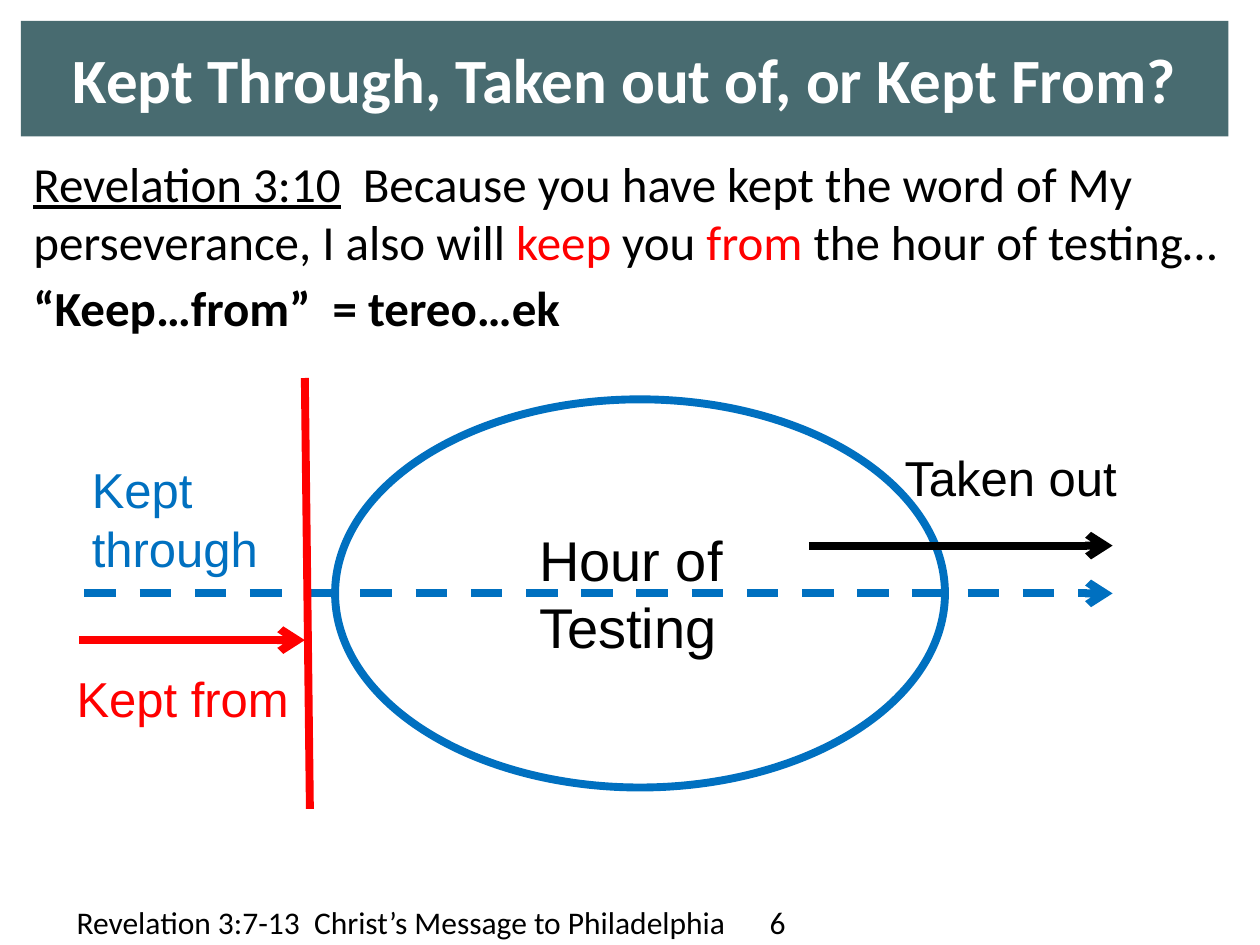
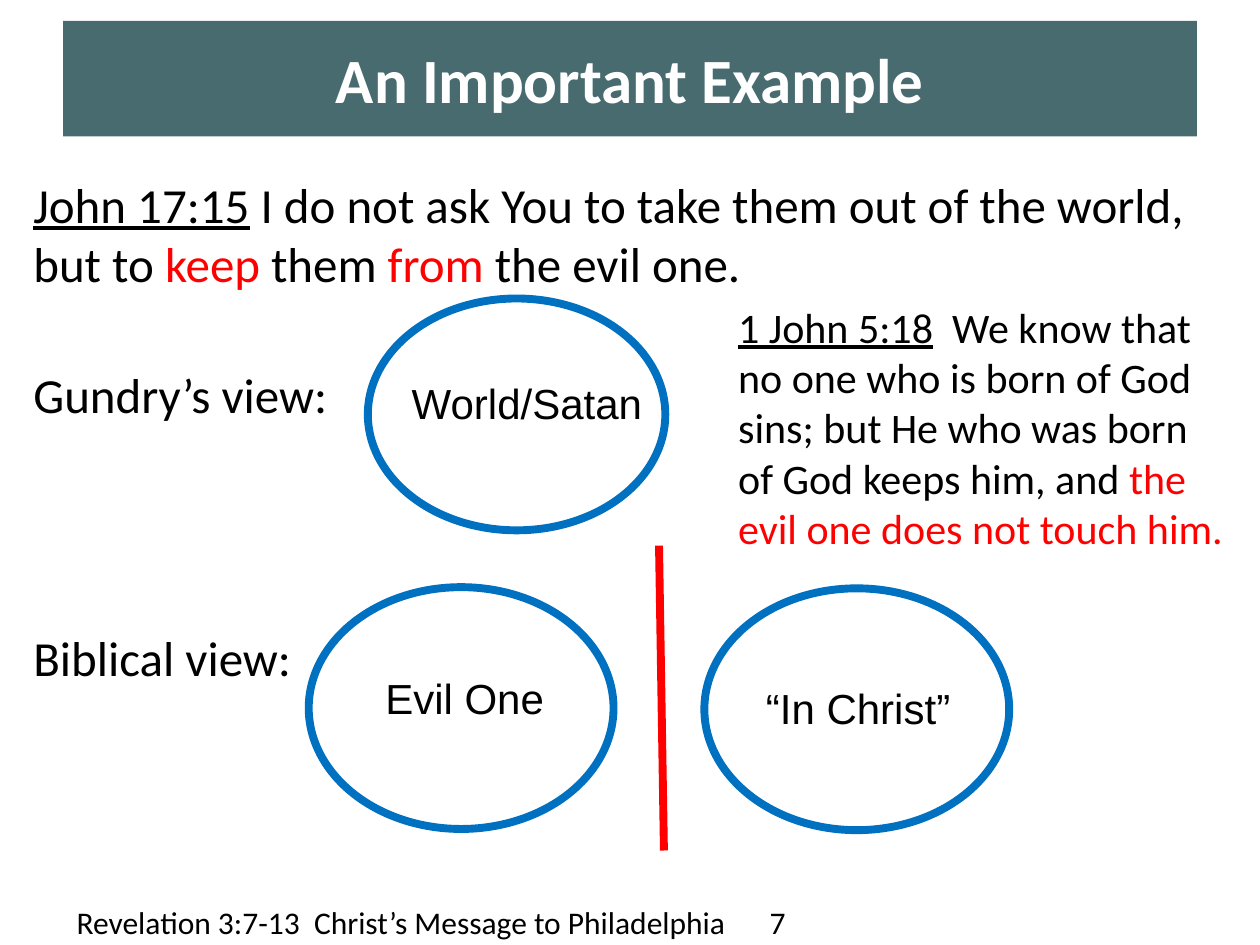
"""Build two slides on being kept from the hour of testing."""
from dataclasses import dataclass

import pptx
import pptx.dml.color
import pptx.enum.dml
import pptx.enum.shapes
import pptx.enum.text
import pptx.oxml
import pptx.oxml.ns
import pptx.util

Pt = pptx.util.Pt
ANCHOR = pptx.enum.text.MSO_ANCHOR
ALIGN = pptx.enum.text.PP_ALIGN


@dataclass(frozen=True)
class Theme:
    """Colours, fonts and sizes that the slides share."""
    band: str = "486B70"
    paper: str = "FFFFFF"
    ink: str = "000000"
    accent: str = "FF0000"
    blue: str = "0070C0"
    body_font: str = "Calibri"
    label_font: str = "Arial"
    title_size: int = 36
    hour_size: int = 32
    body_size: int = 28
    small_size: int = 24
    footer_size: int = 18
    stroke: float = 4.5
    para_gap: float = 4
    row_pitch: float = 37.5


THEME = Theme()
UNDERLINED = {"underline": True}
RED = {"color": THEME.accent}


def rgb(color):
    """Turn a hex string into a colour."""
    return pptx.dml.color.RGBColor.from_string(color)


def points(*lengths):
    """Turn numbers into lengths in points."""
    return [Pt(length) for length in lengths]


def write(paragraph, text, *, size, font=THEME.body_font, color=THEME.ink,
          bold=False, underline=False):
    """Add one formatted run to a paragraph."""
    run = paragraph.add_run()
    run.text = text
    run.font.name = font
    run.font.size = Pt(size)
    run.font.bold = bold
    run.font.underline = underline
    run.font.color.rgb = rgb(color)


def add_text(slide, box, paragraphs, anchor=ANCHOR.TOP, **style):
    """Add a text box from (space before, runs) pairs."""
    frame = slide.shapes.add_textbox(*points(*box)).text_frame
    frame.word_wrap = True
    frame.vertical_anchor = anchor
    for index, (gap, runs) in enumerate(paragraphs):
        paragraph = frame.paragraphs[0] if index == 0 else frame.add_paragraph()
        paragraph.space_before = Pt(gap)
        for text, changes in runs:
            write(paragraph, text, **{**style, **changes})


def add_label(slide, origin, place, text, size=THEME.small_size, color=THEME.ink):
    """Add a diagram label placed relative to the diagram's origin."""
    left, top, width, height = place
    box = (origin[0] + left, origin[1] + top, width, height)
    add_text(slide, box, [(0, [(text, {})])],
             size=size, color=color, font=THEME.label_font)


def add_ring(slide, origin, place):
    """Add an unfilled blue ellipse relative to the diagram's origin."""
    left, top, width, height = place
    ring = slide.shapes.add_shape(
        pptx.enum.shapes.MSO_SHAPE.OVAL,
        *points(origin[0] + left, origin[1] + top, width, height))
    ring.shadow.inherit = False
    ring.fill.background()
    ring.line.color.rgb = rgb(THEME.blue)
    ring.line.width = Pt(THEME.stroke)


def add_line(slide, origin, ends, color, arrow=False, dashed=False):
    """Add a straight line relative to the diagram's origin."""
    x1, y1, x2, y2 = ends
    x, y = origin
    connector = slide.shapes.add_connector(
        pptx.enum.shapes.MSO_CONNECTOR.STRAIGHT,
        *points(x + x1, y + y1, x + x2, y + y2))
    connector.line.color.rgb = rgb(color)
    connector.line.width = Pt(THEME.stroke)
    if dashed:
        connector.line.dash_style = pptx.enum.dml.MSO_LINE.DASH
    qn = pptx.oxml.ns.qn
    properties = connector.element.spPr
    if arrow:
        head = pptx.oxml.parse_xml(
            f'<a:tailEnd {pptx.oxml.ns.nsdecls("a")} type="arrow"/>')
        properties.find(qn("a:ln")).append(head)
    properties.append(properties.makeelement(qn("a:effectLst"), {}))


def add_title(slide, box, text):
    """Place and format the title placeholder as a coloured band."""
    title = slide.shapes.title
    title.left, title.top, title.width, title.height = points(*box)
    title.fill.solid()
    title.fill.fore_color.rgb = rgb(THEME.band)
    frame = title.text_frame
    frame.auto_size = pptx.enum.text.MSO_AUTO_SIZE.NONE
    frame.vertical_anchor = ANCHOR.MIDDLE
    frame.paragraphs[0].alignment = ALIGN.CENTER
    write(frame.paragraphs[0], text, size=THEME.title_size,
          color=THEME.paper, bold=True)


def add_footer(slide, number):
    """Add the series name and the slide number."""
    footer = f"Revelation 3:7-13  Christ’s Message to Philadelphia \t{number}"
    add_text(slide, (36.7, 513.4, 648, 26.6), [(0, [(footer, {})])],
             anchor=ANCHOR.MIDDLE, size=THEME.footer_size)


def add_testing_diagram(slide, origin):
    """Draw the three ways of relating to the hour of testing."""
    add_ring(slide, origin, (155.5, 12.2, 348.5, 221.8))
    add_label(slide, origin, (265, 80.6, 129.6, 85), "Hour of Testing",
              THEME.hour_size)
    ways = [
        ("Kept through", THEME.blue, (9.4, 43.2, 168, 75),
         (12.2, 123.1, 599.8, 123.1), True),
        ("Taken out", THEME.ink, (473.8, 36, 222, 41),
         (426.2, 95.8, 599.8, 95.8), False),
        ("Kept from", THEME.accent, (0.7, 162.7, 168, 41),
         (9.4, 149.8, 138.2, 149.8), False),
    ]
    for name, color, place, ends, dashed in ways:
        add_line(slide, origin, ends, color, arrow=True, dashed=dashed)
        add_label(slide, origin, place, name, THEME.body_size, color)
    add_line(slide, origin, (138.2, 0, 141.1, 246.2), THEME.accent)


def add_views_diagram(slide, origin):
    """Draw the two views of being kept from the evil one."""
    realms = [
        ("World/Satan", (34.2, 0.6, 170, 132.5), (52.2, 42.4, 174.2, 36)),
        ("Evil One", (0.4, 165.5, 174.2, 138.2), (37.1, 210.9, 120.2, 36)),
        ("“In Christ”", (226.5, 166.2, 174.2, 138.2), (254.6, 216.6, 120.2, 36)),
    ]
    for name, ring, place in realms:
        add_ring(slide, origin, ring)
        add_label(slide, origin, place, name)
    add_line(slide, origin, (200.6, 141.8, 203.4, 316), THEME.accent)


def build_kept_from(slide):
    """Build the slide that compares the three readings."""
    add_title(slide, (12, 12, 690, 66), "Kept Through, Taken out of, or Kept From?")
    verse = [
        ("Revelation 3:10", UNDERLINED),
        ("  Because you have kept the word of My perseverance, I also will ", {}),
        ("keep", RED), (" you ", {}), ("from", RED),
        (" the hour of testing…", {}),
    ]
    greek = [("“Keep…from”  = tereo…ek", {"bold": True})]
    add_text(slide, (12, 84, 696, 390),
             [(THEME.para_gap, verse), (THEME.para_gap, greek)],
             size=THEME.body_size)
    add_testing_diagram(slide, (36, 216))


def build_example(slide):
    """Build the slide with the parallel verse and the two views."""
    add_title(slide, (36, 12, 648, 66), "An Important Example")
    verse = [
        ("John 17:15", UNDERLINED),
        (" I do not ask You to take them out of the world, but to ", {}),
        ("keep", RED), (" them ", {}), ("from", RED), (" the evil one.", {}),
    ]
    gap, pitch = THEME.para_gap, THEME.row_pitch
    add_text(slide, (12, 96, 696, 396),
             [(gap, verse),
              (gap + pitch, [("Gundry’s view:", {})]),
              (gap + 3 * pitch, [("Biblical view:", {})])],
             size=THEME.body_size)
    add_views_diagram(slide, (176, 170))
    parallel = [
        ("1 John 5:18", UNDERLINED),
        ("  We know that no one who is born of God sins; but He who was born "
         "of God keeps him, and ", {}),
        ("the evil one does not touch him.", RED),
    ]
    add_text(slide, (414.7, 168.5, 293.8, 152.6), [(0, parallel)],
             size=THEME.small_size)


def main():
    """Build and save the presentation."""
    deck = pptx.Presentation()
    deck.slide_width, deck.slide_height = points(720, 540)
    title_only = deck.slide_layouts[5]
    for number, build in enumerate((build_kept_from, build_example), start=6):
        slide = deck.slides.add_slide(title_only)
        build(slide)
        add_footer(slide, number)
    deck.save("out.pptx")


if __name__ == "__main__":
    main()
